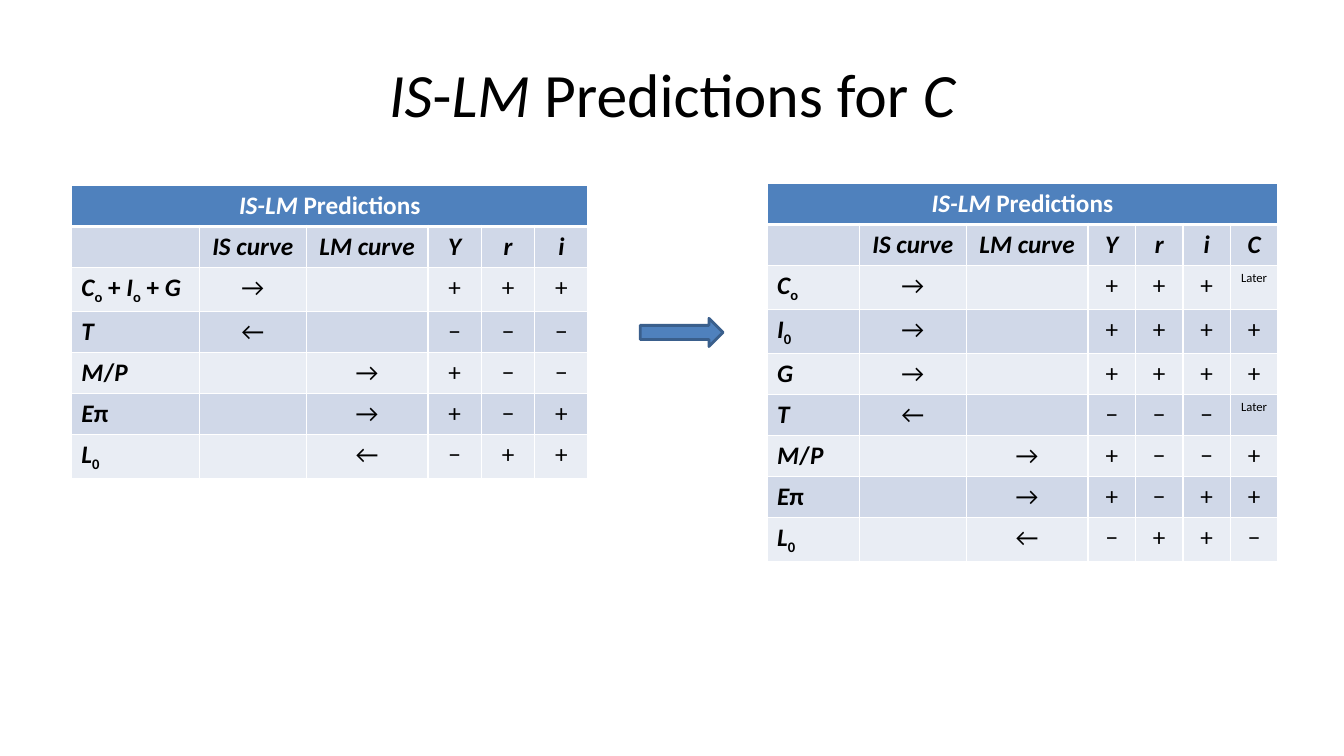
from lxml.etree import SubElement
from pptx import Presentation
from pptx.dml.color import RGBColor
from pptx.enum.shapes import MSO_SHAPE
from pptx.enum.text import MSO_ANCHOR, PP_ALIGN
from pptx.oxml.ns import qn
from pptx.util import Inches, Pt

UNIT = 7.5 / 18
ROW_HEIGHT = 0.97
ITALIC, PLAIN, SUB = "italic", "plain", "subscript"


def colour(code):
    """Turn a hex string into a colour."""
    return RGBColor.from_string(code)


def grid(*lengths):
    """Convert columns and rows of the 32 by 18 grid into lengths."""
    return [Inches(length * UNIT) for length in lengths]


class SlideBuilder:
    """Hold the style and the current slide."""

    font = "Calibri"
    ink, paper = "000000", "FFFFFF"
    accent, accent_edge = "4F81BD", "3A5F8C"
    bands = ("D0D8E8", "E9EDF4")

    def __init__(self, page):
        """Keep the slide that is drawn on."""
        self.page = page

    def add_spans(self, frame, spans, size, code, bold=False, align=PP_ALIGN.CENTER):
        """Fill one paragraph run by run."""
        para = frame.paragraphs[0]
        para.alignment = align
        for text, style in spans:
            span = para.add_run()
            span.text = text
            font = span.font
            font.name, font.size, font.bold = self.font, Pt(size), bold
            font.italic = style == ITALIC
            font.color.rgb = colour(code)
            if style == SUB:
                font._element.set("baseline", "-25000")

    def title(self, spans, *place):
        """Place and fill the title."""
        box = self.page.shapes.title
        box.left, box.top, box.width, box.height = grid(*place)
        box.text_frame.vertical_anchor = MSO_ANCHOR.MIDDLE
        self.add_spans(box.text_frame, spans, 44, self.ink)

    def arrow(self, *place):
        """Draw a block arrow pointing right."""
        arrow = self.page.shapes.add_shape(MSO_SHAPE.RIGHT_ARROW, *grid(*place))
        arrow.shadow.inherit = False
        arrow.fill.solid()
        arrow.fill.fore_color.rgb = colour(self.accent)
        arrow.line.color.rgb = colour(self.accent_edge)
        arrow.line.width = Pt(2)

    def paint(self, cell, code, top=1, bottom=1):
        """Give a cell its borders and fill."""
        properties = cell._tc.get_or_add_tcPr()
        for side, width in zip(("lnL", "lnR", "lnT", "lnB"), (1, 1, top, bottom)):
            line = SubElement(properties, qn(f"a:{side}"), w=str(Pt(width)))
            fill = SubElement(line, qn("a:solidFill"))
            SubElement(fill, qn("a:srgbClr"), val=self.paper)
        cell.fill.solid()
        cell.fill.fore_color.rgb = colour(code)

    def predictions(self, left, top, widths, headings, shocks):
        """Draw a table of predictions with one row for each shock."""
        count = len(shocks) + 2
        place = grid(left, top, sum(widths), count * ROW_HEIGHT)
        table = self.page.shapes.add_table(count, len(widths), *place).table
        for column, width in zip(table.columns, grid(*widths)):
            column.width = width
        for row in table.rows:
            row.height = grid(ROW_HEIGHT)[0]
        for cell in table.rows[0].cells:
            self.paint(cell, self.accent, bottom=3)
        banner = table.cell(0, 0)
        banner.merge(table.cell(0, len(widths) - 1))
        self.add_spans(banner.text_frame, [("IS-LM", ITALIC), (" Predictions", PLAIN)],
                       18, self.paper, bold=True)
        for number in range(1, count):
            for cell in table.rows[number].cells:
                self.paint(cell, self.bands[(number - 1) % 2], top=3 if number == 1 else 1)
        for column, heading in enumerate(headings, 1):
            self.add_spans(table.cell(1, column).text_frame, [(heading, ITALIC)],
                           18, self.ink, bold=True)
        for number, (label, marks) in enumerate(shocks, 2):
            self.add_spans(table.cell(number, 0).text_frame, label, 18, self.ink,
                           bold=True, align=PP_ALIGN.LEFT)
            for column, mark in enumerate(marks, 1):
                if mark:
                    size = 9 if mark == "Later" else 18
                    self.add_spans(table.cell(number, column).text_frame,
                                   [(mark, PLAIN)], size, self.ink)


HEADINGS = ["IS curve", "LM curve", "Y", "r", "i"]
RISE = ["→", "", "+", "+", "+"]
SPENDING = [("C", ITALIC), ("o", SUB), (" + ", PLAIN), ("I", ITALIC), ("o", SUB),
            (" + ", PLAIN), ("G", ITALIC)]
COMMON = [
    ([("T", ITALIC)], ["←", "", "−", "−", "−"]),
    ([("M", ITALIC), ("/", PLAIN), ("P", ITALIC)], ["", "→", "+", "−", "−"]),
    ([("E", ITALIC), ("π", PLAIN)], ["", "→", "+", "−", "+"]),
    ([("L", ITALIC), ("0", SUB)], ["", "←", "−", "+", "+"]),
]
SPLIT = [
    ([("C", ITALIC), ("o", SUB)], RISE),
    ([("I", ITALIC), ("0", SUB)], RISE),
    ([("G", ITALIC)], RISE),
]
CONSUMPTION = ["Later", "+", "+", "Later", "+", "+", "−"]


def main():
    """Build and save the deck."""
    deck = Presentation()
    deck.slide_width, deck.slide_height = Inches(13.33), Inches(7.5)
    builder = SlideBuilder(deck.slides.add_slide(deck.slide_layouts[5]))
    builder.title([("IS", ITALIC), ("-", PLAIN), ("LM", ITALIC),
                   (" Predictions for ", PLAIN), ("C", ITALIC)], 1.6, 0.72, 28.8, 3)
    builder.arrow(15.24, 7.58, 1.97, 0.67)
    extended = [(label, marks + [effect])
                for (label, marks), effect in zip(SPLIT + COMMON, CONSUMPTION)]
    builder.predictions(18.26, 4.37, [2.2, 2.54, 2.9] + [1.13] * 4,
                        HEADINGS + ["C"], extended)
    builder.predictions(1.7, 4.42, [3.05, 2.54, 2.9] + [1.27] * 3,
                        HEADINGS, [(SPENDING, RISE)] + COMMON)
    deck.save("out.pptx")


if __name__ == "__main__":
    main()
